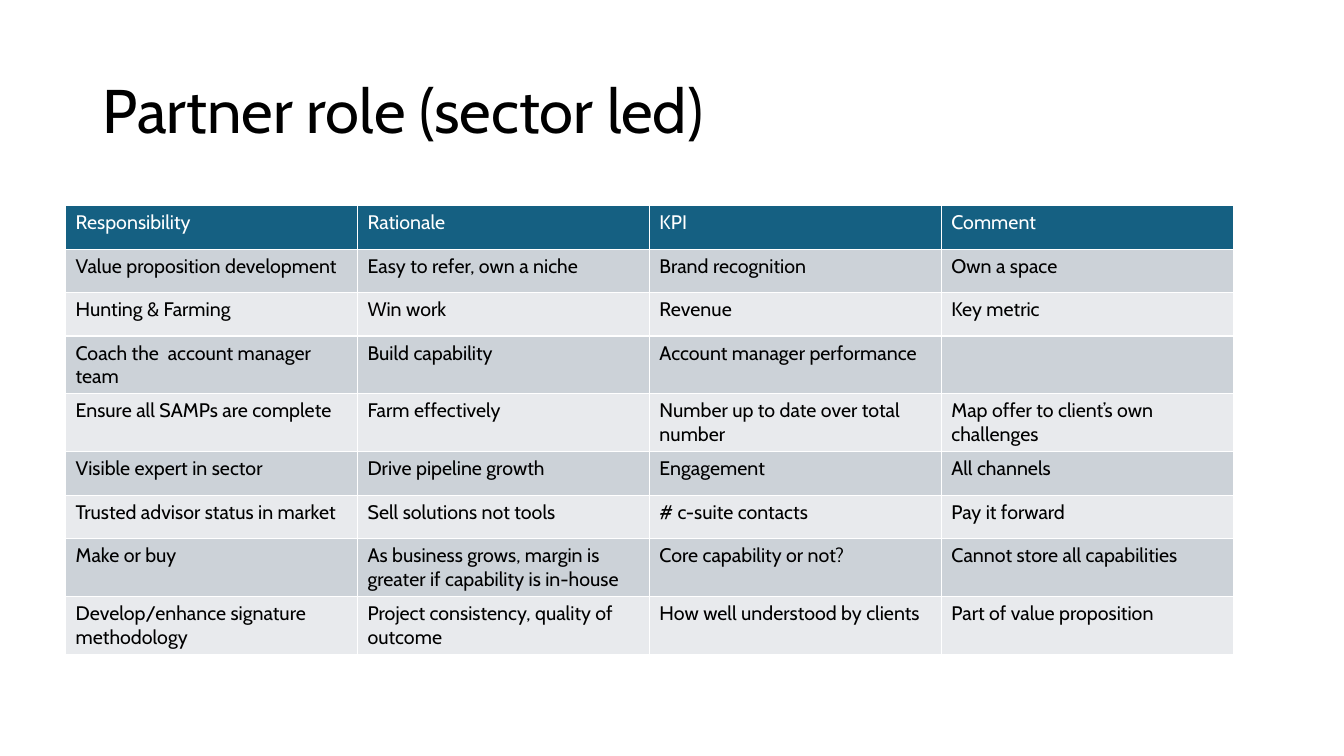
from pptx import Presentation
from pptx.dml.color import RGBColor
from pptx.enum import text
from pptx.util import Inches, Pt

ROWS = [
    ("Responsibility", "Rationale", "KPI", "Comment"),
    ("Value proposition development", "Easy to refer, own a niche", "Brand recognition", "Own a space"),
    ("Hunting & Farming", "Win work", "Revenue", "Key metric"),
    ("Coach the  account manager team", "Build capability", "Account manager performance", ""),
    ("Ensure all SAMPs are complete", "Farm effectively", "Number up to date over total number",
     "Map offer to client’s own challenges"),
    ("Visible expert in sector", "Drive pipeline growth", "Engagement", "All channels"),
    ("Trusted advisor status in market", "Sell solutions not tools", "# c-suite contacts", "Pay it forward"),
    ("Make or buy", "As business grows, margin is greater if capability is in-house",
     "Core capability or not?", "Cannot store all capabilities"),
    ("Develop/enhance signature methodology", "Project consistency, quality of outcome",
     "How well understood by clients", "Part of value proposition"),
]


def color(code):
    return RGBColor.from_string(code)


class Deck:
    font = "Cabin"
    ink = "000000"
    paper = "FFFFFF"
    head = "156082"
    bands = ("E8EAED", "CCD2D8")

    def __init__(self):
        self.prs = Presentation()
        self.prs.slide_width = Inches(13.33)
        self.prs.slide_height = Inches(7.5)
        self.slide = self.prs.slides.add_slide(self.prs.slide_layouts[5])

    def area(self, left, top, width, height):
        wide = self.prs.slide_width / 100
        high = self.prs.slide_height / 100
        return int(left * wide), int(top * high), int(width * wide), int(height * high)

    def style(self, para, size, tint):
        for run in para.runs:
            run.font.name = self.font
            run.font.size = Pt(size)
            run.font.bold = False
            run.font.color.rgb = color(tint)

    def title(self, words, *share):
        box = self.slide.shapes.title
        box.left, box.top, box.width, box.height = self.area(*share)
        frame = box.text_frame
        frame.text = words
        frame.vertical_anchor = text.MSO_ANCHOR.MIDDLE
        para = frame.paragraphs[0]
        para.alignment = text.PP_ALIGN.LEFT
        para.line_spacing = 0.9
        self.style(para, 44, self.ink)

    def table(self, rows, *share):
        grid = self.slide.shapes.add_table(len(rows), len(rows[0]), *self.area(*share)).table
        for r, row in enumerate(rows):
            fill = self.bands[r % 2] if r else self.head
            tint = self.ink if r else self.paper
            for c, words in enumerate(row):
                cell = grid.cell(r, c)
                cell.fill.solid()
                cell.fill.fore_color.rgb = color(fill)
                cell.text_frame.text = words
                self.style(cell.text_frame.paragraphs[0], 14, tint)

    def save(self):
        self.prs.save("out.pptx")


def main():
    deck = Deck()
    deck.title("Partner role (sector led)", 6.9, 5.33, 86.25, 19.33)
    deck.table(ROWS, 4.88, 27.2, 86.88, 51.75)
    deck.save()


if __name__ == "__main__":
    main()
